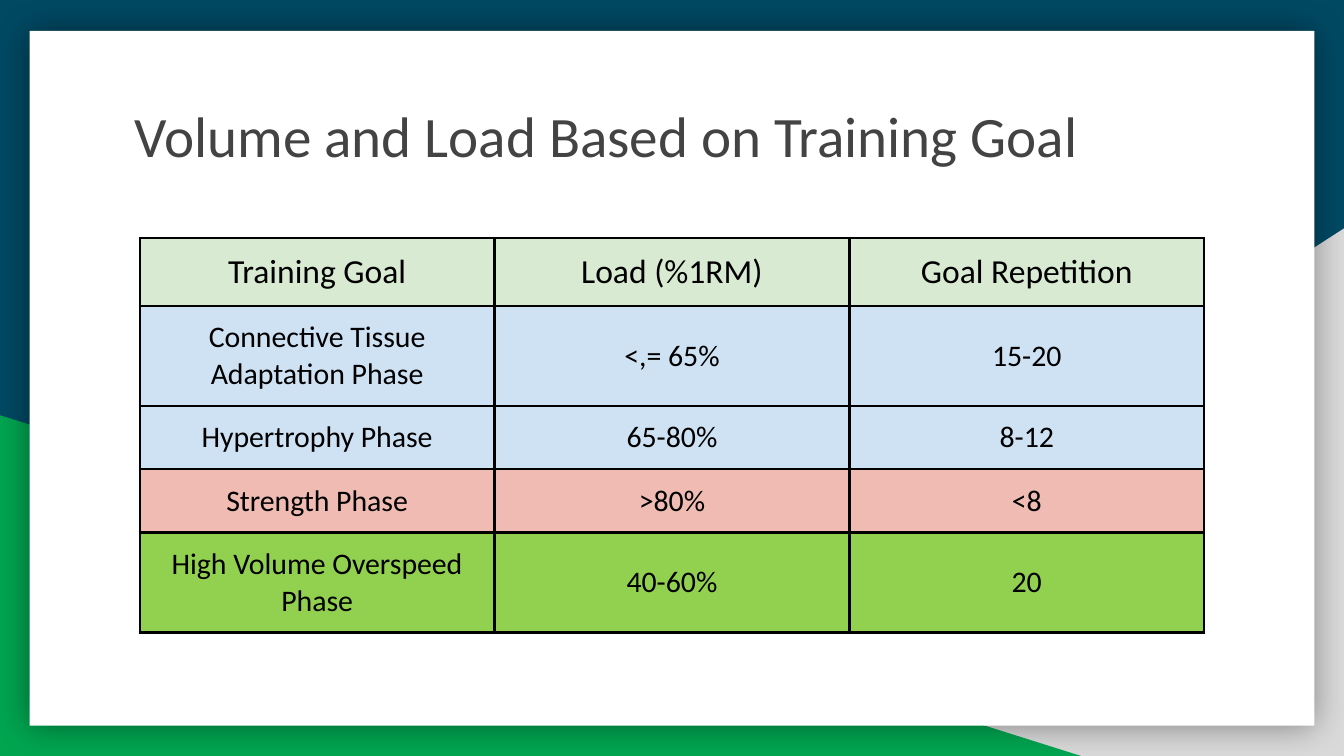
from lxml.etree import SubElement
from pptx import Presentation
from pptx.dml.color import RGBColor
from pptx.enum.shapes import MSO_SHAPE
from pptx.enum.text import MSO_ANCHOR, MSO_AUTO_SIZE, PP_ALIGN
from pptx.oxml.ns import qn
from pptx.util import Inches, Pt

# Content
TITLE = "Volume and Load Based on Training Goal"
GOALS = [  # row colour, cells
    ("header", ["Training Goal", "Load (%1RM)", "Goal Repetition"]),
    ("build", ["Connective Tissue Adaptation Phase", "<,= 65%", "15-20"]),
    ("build", ["Hypertrophy Phase", "65-80%", "8-12"]),
    ("strength", ["Strength Phase", ">80%", "<8"]),
    ("overspeed", ["High Volume Overspeed Phase", "40-60%", "20"]),
]

THEME = {
    "font": "Calibri",
    "sizes": {"title": 30.6, "header": 18, "body": 16},
    "colors": {
        "background": "004963", "grey": "D9D9D9", "green": "00A550",
        "card": "FFFFFF", "title": "434343", "text": "000000",
        "header": "D9EAD3", "build": "CFE2F3", "strength": "F0BBB2",
        "overspeed": "92D050", "border": "000000",
    },
}

# Layout: left, top, width, height in inches
SLIDE_WIDTH = 10
SLIDE_HEIGHT = SLIDE_WIDTH * 9 / 16
BACKDROP = [
    (MSO_SHAPE.RIGHT_TRIANGLE, (3.92, 1.7, 6.08, 3.93), "grey"),
    (MSO_SHAPE.RIGHT_TRIANGLE, (0, 3.09, 8.06, 2.54), "green"),
    (MSO_SHAPE.RECTANGLE, (0.22, 0.23, 9.56, 5.17), "card"),
]
TITLE_BOX = (0.9, 0.65, 8.21, 1.04)
TABLE_LEFT, TABLE_TOP = 1.04, 1.77
COLUMN_WIDTH, ROW_HEIGHT = 2.64, 0.42
INSET = Inches(0.1)
MARGINS = {f"margin_{side}": INSET for side in ("left", "top", "right", "bottom")}


def color(name):
    return RGBColor.from_string(THEME["colors"][name])


def apply(target, values):
    for name, value in values.items():
        setattr(target, name, value)


def style_text(paragraph, size, color_name, alignment):
    paragraph.alignment = alignment
    apply(paragraph.runs[0].font, {
        "name": THEME["font"], "size": Pt(THEME["sizes"][size]), "bold": False})
    paragraph.runs[0].font.color.rgb = color(color_name)


def add_soft_shadow(shape):
    effects = shape._element.spPr.find(qn("a:effectLst"))
    shadow = SubElement(effects, qn("a:outerShdw"), blurRad=str(Pt(18)),
                        dist="0", dir="0", algn="ctr", rotWithShape="0")
    tint = SubElement(shadow, qn("a:srgbClr"), val="000000")
    SubElement(tint, qn("a:alpha"), val="40000")


def add_borders(cell):
    properties = cell._tc.get_or_add_tcPr()
    for position, side in enumerate(("lnL", "lnR", "lnT", "lnB")):
        line = SubElement(properties, qn(f"a:{side}"), w=str(Pt(1.5)))
        fill = SubElement(line, qn("a:solidFill"))
        SubElement(fill, qn("a:srgbClr"), val=THEME["colors"]["border"])
        properties.insert(position, line)  # borders come before the cell fill


presentation = Presentation()
apply(presentation, {
    "slide_width": Inches(SLIDE_WIDTH), "slide_height": Inches(SLIDE_HEIGHT)})
slide = presentation.slides.add_slide(presentation.slide_layouts[5])
slide.background.fill.solid()
slide.background.fill.fore_color.rgb = color("background")

# Coloured triangles and white card
backdrop = []
for kind, box, color_name in BACKDROP:
    panel = slide.shapes.add_shape(kind, *map(Inches, box))
    panel.fill.solid()
    panel.fill.fore_color.rgb = color(color_name)
    panel.line.fill.background()
    panel.shadow.inherit = False
    backdrop.append(panel)
grey_corner, green_corner, card = backdrop
grey_corner._element.spPr.xfrm.set("flipH", "1")
add_soft_shadow(card)

# Title, in front of the card
title = slide.shapes.title
slide.shapes._spTree.append(title._element)
apply(title, dict(zip(("left", "top", "width", "height"), map(Inches, TITLE_BOX))))
title.text_frame.text = TITLE
apply(title.text_frame, {
    **MARGINS, "word_wrap": True, "auto_size": MSO_AUTO_SIZE.NONE,
    "vertical_anchor": MSO_ANCHOR.TOP})
style_text(title.text_frame.paragraphs[0], "title", "title", PP_ALIGN.LEFT)

# Table of training goals
row_count, column_count = len(GOALS), len(GOALS[0][1])
goals_table = slide.shapes.add_table(
    row_count, column_count, Inches(TABLE_LEFT), Inches(TABLE_TOP),
    Inches(COLUMN_WIDTH * column_count), Inches(ROW_HEIGHT * row_count)).table
apply(goals_table, {"first_row": False, "horz_banding": False})
for row_index, (color_name, texts) in enumerate(GOALS):
    size = "header" if color_name == "header" else "body"
    for column_index, text in enumerate(texts):
        cell = goals_table.cell(row_index, column_index)
        cell.text = text
        apply(cell, {**MARGINS, "vertical_anchor": MSO_ANCHOR.MIDDLE})
        cell.fill.solid()
        cell.fill.fore_color.rgb = color(color_name)
        add_borders(cell)
        style_text(cell.text_frame.paragraphs[0], size, "text", PP_ALIGN.CENTER)

presentation.save("out.pptx")
